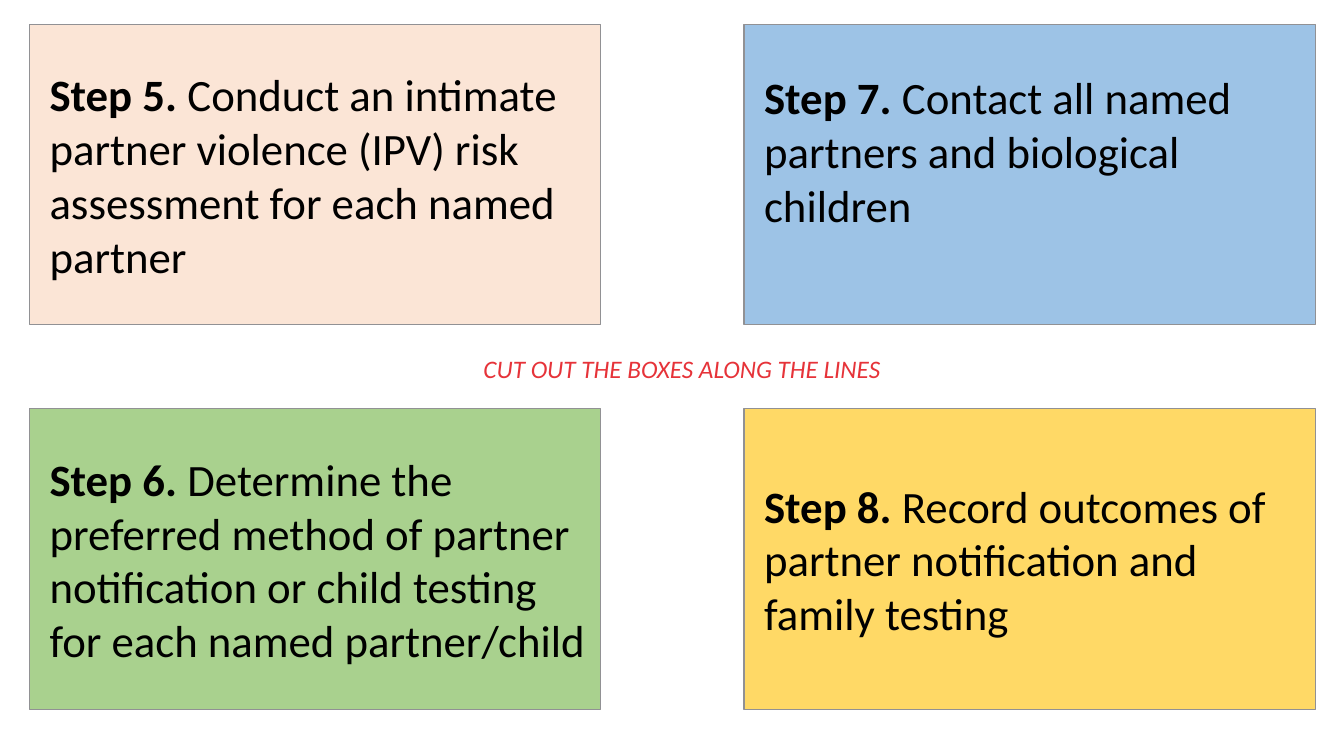
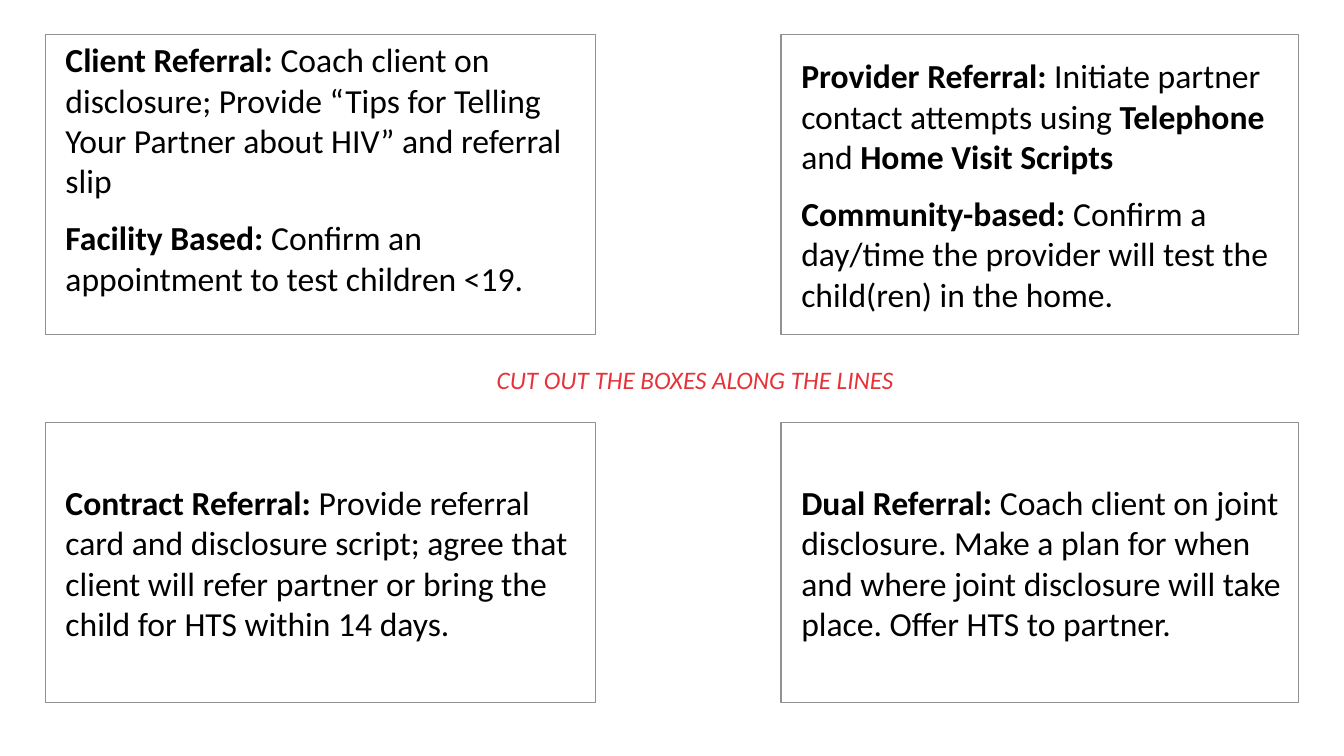
import dataclasses

import pptx
import pptx.dml.color
import pptx.enum.shapes
import pptx.enum.text
import pptx.util

Pt = pptx.util.Pt
RGB = pptx.dml.color.RGBColor.from_string
ANCHOR = pptx.enum.text.MSO_ANCHOR


@dataclasses.dataclass(frozen=True)
class Theme:
    font: str = "Calibri"
    ink: str = "000000"
    outline: str = "919194"
    note: str = "E63339"
    peach: str = "FBE5D6"
    green: str = "A9D18E"
    blue: str = "9DC3E6"
    yellow: str = "FFD966"
    step_size: int = 32
    action_size: int = 24
    note_size: int = 18
    para_gap: int = 12


class Deck:
    """Cut-out cards in one theme, drawn on the current slide."""

    def __init__(self, theme):
        self.theme = theme
        self.prs = pptx.Presentation()
        self.prs.slide_width, self.prs.slide_height = Pt(960), Pt(540)
        self.slide = None

    def new_slide(self):
        self.slide = self.prs.slides.add_slide(self.prs.slide_layouts[6])

    def style(self, r, size, color, bold=False, italic=False):
        r.font.name, r.font.size = self.theme.font, Pt(size)
        r.font.bold, r.font.italic = bold, italic
        r.font.color.rgb = RGB(color)

    def card(self, box, paragraphs, size, fill=None, anchor=ANCHOR.MIDDLE, lift=0):
        sp = self.slide.shapes.add_shape(
            pptx.enum.shapes.MSO_SHAPE.RECTANGLE, *map(Pt, box))
        sp.shadow.inherit = False
        sp.line.color.rgb, sp.line.width = RGB(self.theme.outline), Pt(1)
        if fill:
            sp.fill.solid()
            sp.fill.fore_color.rgb = RGB(fill)
        else:
            sp.fill.background()
        tf = sp.text_frame
        tf.word_wrap, tf.vertical_anchor = True, anchor
        tf.margin_left, tf.margin_right = Pt(14.4), Pt(7.2)
        tf.margin_top, tf.margin_bottom = Pt(3.6), Pt(3.6 + lift)
        for i, parts in enumerate(paragraphs):
            p = tf.add_paragraph() if i else tf.paragraphs[0]
            p.alignment = pptx.enum.text.PP_ALIGN.LEFT
            p.space_before = Pt(self.theme.para_gap if i else 0)
            for j, text in enumerate(parts):
                r = p.add_run()
                r.text = text
                self.style(r, size, self.theme.ink, bold=j % 2 == 0)

    def cut_note(self, left, top):
        sp = self.slide.shapes.add_textbox(Pt(left), Pt(top), Pt(477.4), Pt(29))
        tf = sp.text_frame
        tf.word_wrap = True
        tf.text = "CUT OUT THE BOXES ALONG THE LINES"
        p = tf.paragraphs[0]
        p.alignment = pptx.enum.text.PP_ALIGN.CENTER
        self.style(p.runs[0], self.theme.note_size, self.theme.note, italic=True)


def build_steps(deck):
    t = deck.theme
    cols, rows = (21, 531.4), (17.3, 292)
    steps = [
        (0, 0, t.peach, 0, "Step 5. ",
         "Conduct an intimate partner violence (IPV) risk assessment for each named partner"),
        (0, 1, t.green, 0, "Step 6. ",
         "Determine the preferred method of partner notification or child testing "
         "for each named partner/child"),
        (1, 0, t.blue, 34, "Step 7. ",
         "Contact all named partners and biological children"),
        (1, 1, t.yellow, 0, "Step 8. ",
         "Record outcomes of partner notification and family testing"),
    ]
    deck.new_slide()
    for col, row, fill, lift, label, text in steps:
        box = (cols[col], rows[row], 408.2, 214.6)
        deck.card(box, [(label, text)], t.step_size, fill, lift=lift)
    deck.cut_note(248.4, 249.1)


def build_actions(deck):
    cols = ((32.4, 393), (558, 369.4))
    rows = ((24.5, 214.6), (301.7, 200.2))
    actions = [
        (0, 0, ANCHOR.TOP, [
            ("Client Referral: ",
             "Coach client on disclosure; Provide “Tips for Telling Your Partner "
             "about HIV” and referral slip"),
            ("Facility Based: ", "Confirm an appointment to test children <19.")]),
        (1, 0, ANCHOR.MIDDLE, [
            ("Provider Referral: ", "Initiate partner contact attempts using",
             " Telephone ", "and", " Home Visit Scripts"),
            ("Community-based: ",
             "Confirm a day/time the provider will test the child(ren) in the home.")]),
        (0, 1, ANCHOR.MIDDLE, [
            ("Contract Referral: ",
             "Provide referral card and disclosure script; agree that client will "
             "refer partner or bring the child for HTS within 14 days.")]),
        (1, 1, ANCHOR.MIDDLE, [
            ("Dual Referral: ",
             "Coach client on joint disclosure. Make a plan for when and where joint "
             "disclosure will take place. Offer HTS to partner.")]),
    ]
    deck.new_slide()
    for col, row, anchor, paragraphs in actions:
        (left, width), (top, height) = cols[col], rows[row]
        deck.card((left, top, width, height), paragraphs,
                  deck.theme.action_size, anchor=anchor)
    deck.cut_note(257.8, 257)


def main():
    deck = Deck(Theme())
    build_steps(deck)
    build_actions(deck)
    deck.prs.save("out.pptx")


if __name__ == "__main__":
    main()
